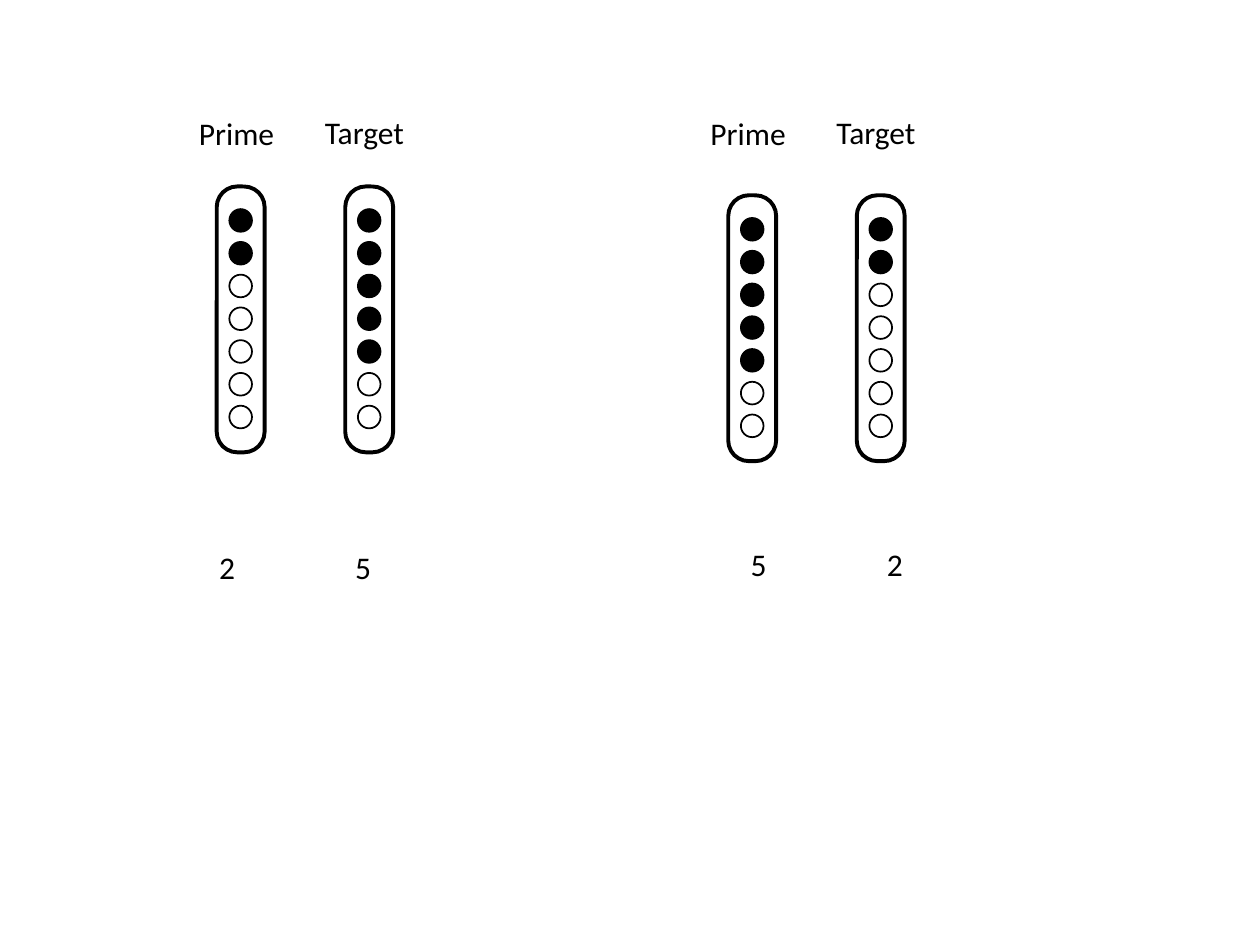
import pptx
import pptx.util
import pptx.dml.color
import pptx.enum.shapes
import pptx.enum.text

Inches = pptx.util.Inches
SHAPE = pptx.enum.shapes.MSO_SHAPE
COLORS = {"ink": "000000"}
DOTS = 7
DOT_SIZE = 0.18
DOT_PITCH = 0.26
BAR_WIDTH, BAR_HEIGHT = 0.38, 2.11


class Deck:
    """Holds the style and the current slide."""

    font = {"name": "Calibri", "size": pptx.util.Pt(18)}
    frame = {"word_wrap": False,
             "auto_size": pptx.enum.text.MSO_AUTO_SIZE.SHAPE_TO_FIT_TEXT}

    def __init__(self, prs):
        self.slide = prs.slides.add_slide(prs.slide_layouts[6])
        self.ink = pptx.dml.color.RGBColor.from_string(COLORS["ink"])

    def outline(self, shapes, kind, x, y, w, h, weight, filled=False):
        sp = shapes.add_shape(kind, Inches(x), Inches(y), Inches(w), Inches(h))
        sp.shadow.inherit = False
        sp.line.color.rgb = self.ink
        sp.line.width = pptx.util.Pt(weight)
        if filled:
            sp.fill.solid()
            sp.fill.fore_color.rgb = self.ink
        else:
            sp.fill.background()
        return sp

    def column(self, x, y, count):
        """A rounded bar of dots, the first `count` of them filled."""
        shapes = self.slide.shapes.add_group_shape().shapes
        bar = self.outline(shapes, SHAPE.ROUNDED_RECTANGLE, x, y,
                           BAR_WIDTH, BAR_HEIGHT, 2.25)
        bar.adjustments[0] = 0.43
        for i in range(DOTS):
            self.outline(shapes, SHAPE.OVAL, x + (BAR_WIDTH - DOT_SIZE) / 2,
                         y + 0.18 + i * DOT_PITCH, DOT_SIZE, DOT_SIZE, 1,
                         filled=i < count)

    def label(self, text, x, y, w):
        sp = self.slide.shapes.add_textbox(Inches(x), Inches(y), Inches(w), Inches(0.4))
        tf = sp.text_frame
        for key, value in self.frame.items():
            setattr(tf, key, value)
        r = tf.paragraphs[0].add_run()
        r.text = text
        for key, value in self.font.items():
            setattr(r.font, key, value)
        r.font.color.rgb = self.ink


def main():
    prs = pptx.Presentation()
    prs.slide_width, prs.slide_height = Inches(10), Inches(7.5)
    deck = Deck(prs)

    # Each trial: bar left and top, number left and top, prime and target counts
    trials = [(1.72, 1.48, 1.64, 4.3, (2, 5)),
              (5.78, 1.55, 5.86, 4.28, (5, 2))]
    # Each role: heading, offset from the trial's left, top, width
    headings = [("Prime", -0.24, 0.86, 0.81), ("Target", 0.76, 0.85, 0.84)]

    for bar_x, bar_y, number_x, number_y, counts in trials:
        for i, (count, heading) in enumerate(zip(counts, headings)):
            text, dx, top, width = heading
            deck.column(bar_x + i * 1.02, bar_y, count)
            deck.label(text, bar_x + dx, top, width)
            deck.label(str(count), number_x + i * 1.08, number_y, 0.33)

    prs.save("out.pptx")


if __name__ == "__main__":
    main()
